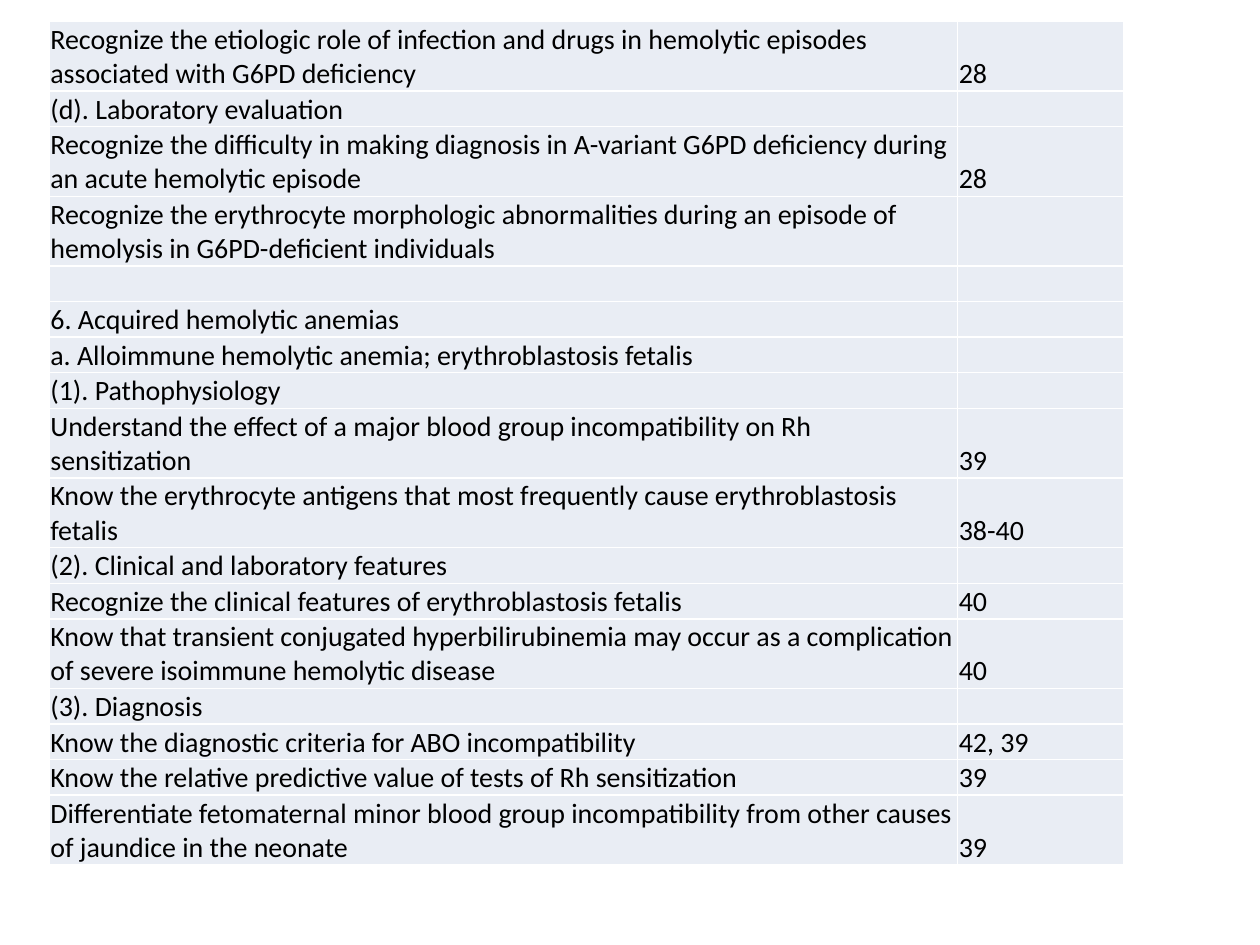
from lxml import etree
from pptx import Presentation
from pptx.dml.color import RGBColor
from pptx.enum import text
from pptx.oxml import ns
from pptx.util import Inches, Pt

COLORS = {"cell": "E9EDF4", "text": "000000"}
LINE_HEIGHT = 0.21

objectives = [
    (2, "Recognize the etiologic role of infection and drugs in hemolytic episodes associated with G6PD deficiency", "28"),
    (1, "(d). Laboratory evaluation", ""),
    (2, "Recognize the difficulty in making diagnosis in A-variant G6PD deficiency during an acute hemolytic episode", "28"),
    (2, "Recognize the erythrocyte morphologic abnormalities during an episode of hemolysis in G6PD-deficient individuals", ""),
    (1, "", ""),
    (1, "6. Acquired hemolytic anemias", ""),
    (1, "a. Alloimmune hemolytic anemia; erythroblastosis fetalis", ""),
    (1, "(1). Pathophysiology", ""),
    (2, "Understand the effect of a major blood group incompatibility on Rh sensitization", "39"),
    (2, "Know the erythrocyte antigens that most frequently cause erythroblastosis fetalis", "38-40"),
    (1, "(2). Clinical and laboratory features", ""),
    (1, "Recognize the clinical features of erythroblastosis fetalis", "40"),
    (2, "Know that transient conjugated hyperbilirubinemia may occur as a complication of severe isoimmune hemolytic disease", "40"),
    (1, "(3). Diagnosis", ""),
    (1, "Know the diagnostic criteria for ABO incompatibility", "42, 39"),
    (1, "Know the relative predictive value of tests of Rh sensitization", "39"),
    (2, "Differentiate fetomaternal minor blood group incompatibility from other causes of jaundice in the neonate", "39"),
]

prs = Presentation()
prs.slide_width, prs.slide_height = Inches(10), Inches(7.5)
slide = prs.slides.add_slide(prs.slide_layouts[6])

frame = slide.shapes.add_table(
    len(objectives), 2, Inches(0.39), Inches(0.17), Inches(8.53), Inches(6.58)
)
outline = frame.table
outline.first_row = False
outline.horz_banding = False
outline.columns[0].width = Inches(7.21)
outline.columns[1].width = Inches(1.32)

for row, (lines, objective, pages) in zip(outline.rows, objectives):
    row.height = Inches(LINE_HEIGHT * lines)
    for cell, content in zip(row.cells, (objective, pages)):
        cell.fill.solid()
        cell.fill.fore_color.rgb = RGBColor.from_string(COLORS["cell"])
        cell.margin_left = cell.margin_right = cell.margin_top = Inches(0.01)
        cell.margin_bottom = 0
        cell.vertical_anchor = text.MSO_ANCHOR.BOTTOM
        cell.text = content
        paragraph = cell.text_frame.paragraphs[0]
        paragraph.font.name = "Calibri"
        paragraph.font.size = Pt(16)
        paragraph.font.color.rgb = RGBColor.from_string(COLORS["text"])
        if not content:
            etree.SubElement(paragraph._p, ns.qn("a:endParaRPr"), sz="1600")

frame.height = Inches(6.58)
prs.save("out.pptx")
